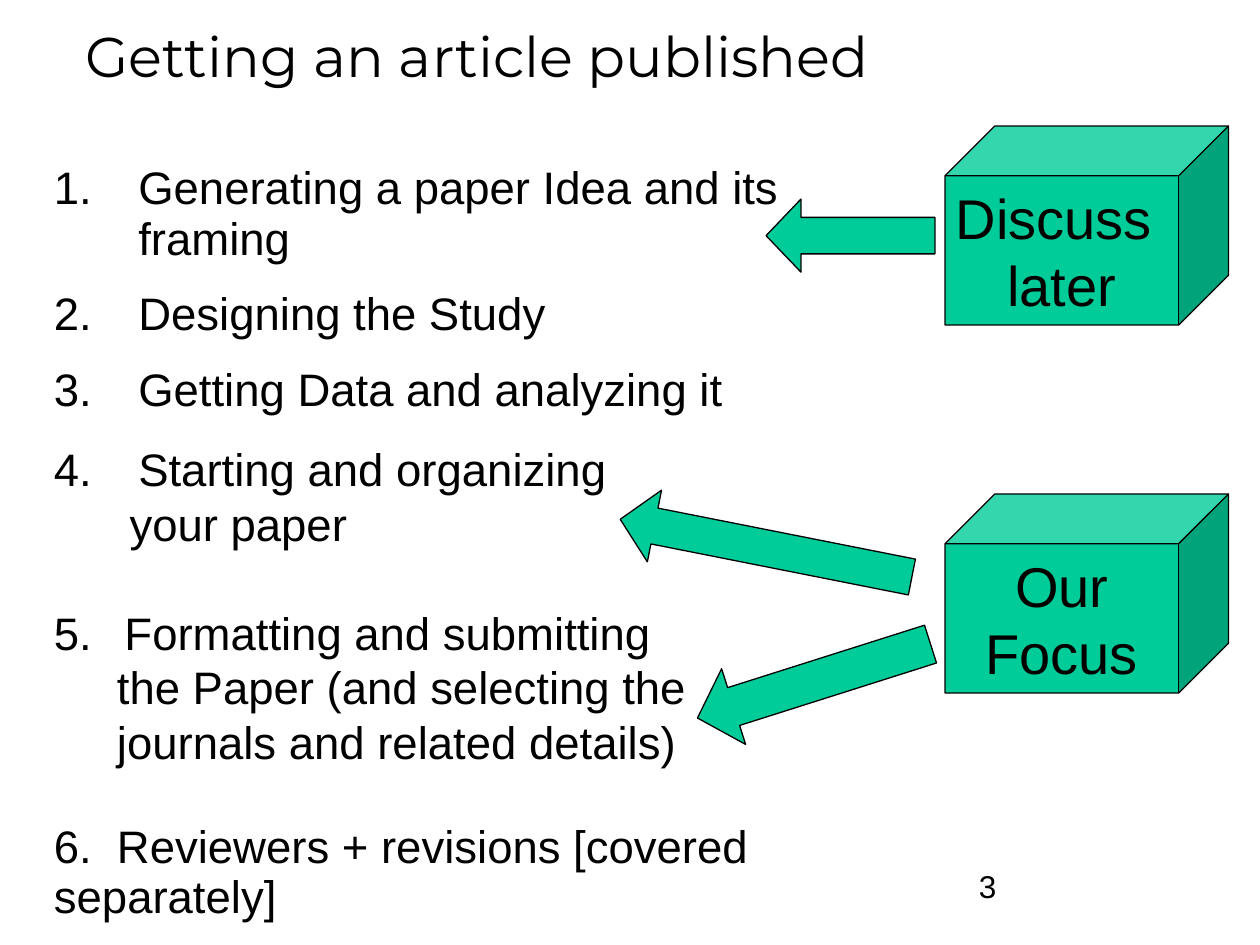
from lxml import etree
from pptx import Presentation
from pptx.dml.color import RGBColor
from pptx.enum import shapes, text
from pptx.oxml.ns import qn
from pptx.util import Inches, Pt

BLACK = RGBColor(0x00, 0x00, 0x00)
GREEN = RGBColor(0x00, 0xCC, 0x99)
BODY_SIZE = 26
TIGHT = 0.93      # line spacing of title and single steps
STEP_GAP = 14.2   # points after a single step
LINE_GAP = 31     # points of one full line between blocks

# Text, left margin, hanging indent, line spacing, space after, first number
STEPS = [
    ("Generating a paper Idea and its framing", 0.67, 0.67, TIGHT, STEP_GAP, 1),
    ("Designing the Study", 0.67, 0.67, TIGHT, STEP_GAP, 1),
    ("Getting Data and analyzing it", 0.67, 0.67, TIGHT, STEP_GAP, 1),
    ("Starting and organizing", 0.67, 0.67, 1.0, 0, 1),
    ("your paper", 0.6, 0, 1.0, LINE_GAP, None),
    ("Formatting and submitting", 0.56, 0.56, 1.0, 0, 5),
    ("the Paper (and selecting the", 0.5, 0, 1.0, 0, None),
    ("journals and related details)", 0.5, 0, 1.0, LINE_GAP, None),
    ("6.\tReviewers + revisions [covered separately]", 0, 0, TIGHT, 0, None),
]


def style(paragraph, size, font="Arial"):
    for run in paragraph.runs:
        run.font.name = font
        run.font.size = Pt(size)
        run.font.color.rgb = BLACK


def add_text(slide, left, top, width, height):
    frame = slide.shapes.add_textbox(
        Inches(left), Inches(top), Inches(width), Inches(height)).text_frame
    frame.word_wrap = True
    return frame


def add_line(slide, words, box, size, font="Arial", spacing=1.0):
    line = add_text(slide, *box).paragraphs[0]
    line.text = words
    line.line_spacing = spacing
    style(line, size, font)


def add_steps(slide):
    frame = add_text(slide, 0.33, 1.25, 6, 5.92)
    for i, (words, margin, hanging, spacing, after, start) in enumerate(STEPS):
        step = frame.add_paragraph() if i else frame.paragraphs[0]
        step.text = words
        step.line_spacing = spacing
        step.space_after = Pt(after)
        style(step, BODY_SIZE)
        props = step._p.get_or_add_pPr()
        props.set("marL", str(Inches(margin)))
        props.set("indent", str(-Inches(hanging)))
        if start:
            number = etree.SubElement(props, qn("a:buAutoNum"), type="arabicPeriod")
            if start > 1:
                number.set("startAt", str(start))
        elif "\t" in words:
            tabs = etree.SubElement(props, qn("a:tabLst"))
            etree.SubElement(tabs, qn("a:tab"), pos=str(Inches(0.61)), algn="l")


def add_green(slide, kind, left, top, width, height):
    solid = slide.shapes.add_shape(
        kind, Inches(left), Inches(top), Inches(width), Inches(height))
    solid.shadow.inherit = False
    solid.fill.solid()
    solid.fill.fore_color.rgb = GREEN
    solid.line.color.rgb = BLACK
    solid.line.width = Pt(0.75)
    return solid


def add_cube(slide, top, lines):
    cube = add_green(slide, shapes.MSO_SHAPE.CUBE, 7.5, top, 2.25, 1.58)
    frame = cube.text_frame
    frame.text = "\n".join(lines)
    frame.word_wrap = False
    frame.vertical_anchor = text.MSO_ANCHOR.MIDDLE
    for line in frame.paragraphs:
        line.alignment = text.PP_ALIGN.CENTER
        style(line, 32)


def add_arrow(slide, left, top, width, height, angle):
    arrow = add_green(slide, shapes.MSO_SHAPE.RIGHT_ARROW, left, top, width, height)
    arrow.adjustments[1] = 0.477
    arrow.rotation = angle


def main():
    deck = Presentation()
    deck.slide_width, deck.slide_height = Inches(10), Inches(7.5)
    slide = deck.slides.add_slide(deck.slide_layouts[6])

    # Title, page number and numbered steps
    add_line(slide, "3", (7.67, 6.83, 2.08, 0.5), 18)
    add_line(slide, "Getting an article published", (0.58, 0.17, 8.71, 1),
             32, "Montserrat", TIGHT)
    add_steps(slide)

    # Cubes and the arrows from them to the steps
    add_cube(slide, 1, ["Discuss ", "later"])
    add_arrow(slide, 6.08, 1.58, 1.34, 0.58, 180)
    add_cube(slide, 3.92, ["Our", "Focus"])
    add_arrow(slide, 4.9, 4.06, 2.36, 0.58, 191.2)
    add_arrow(slide, 5.49, 5.09, 1.94, 0.63, 162.4)

    deck.save("out.pptx")


if __name__ == "__main__":
    main()
